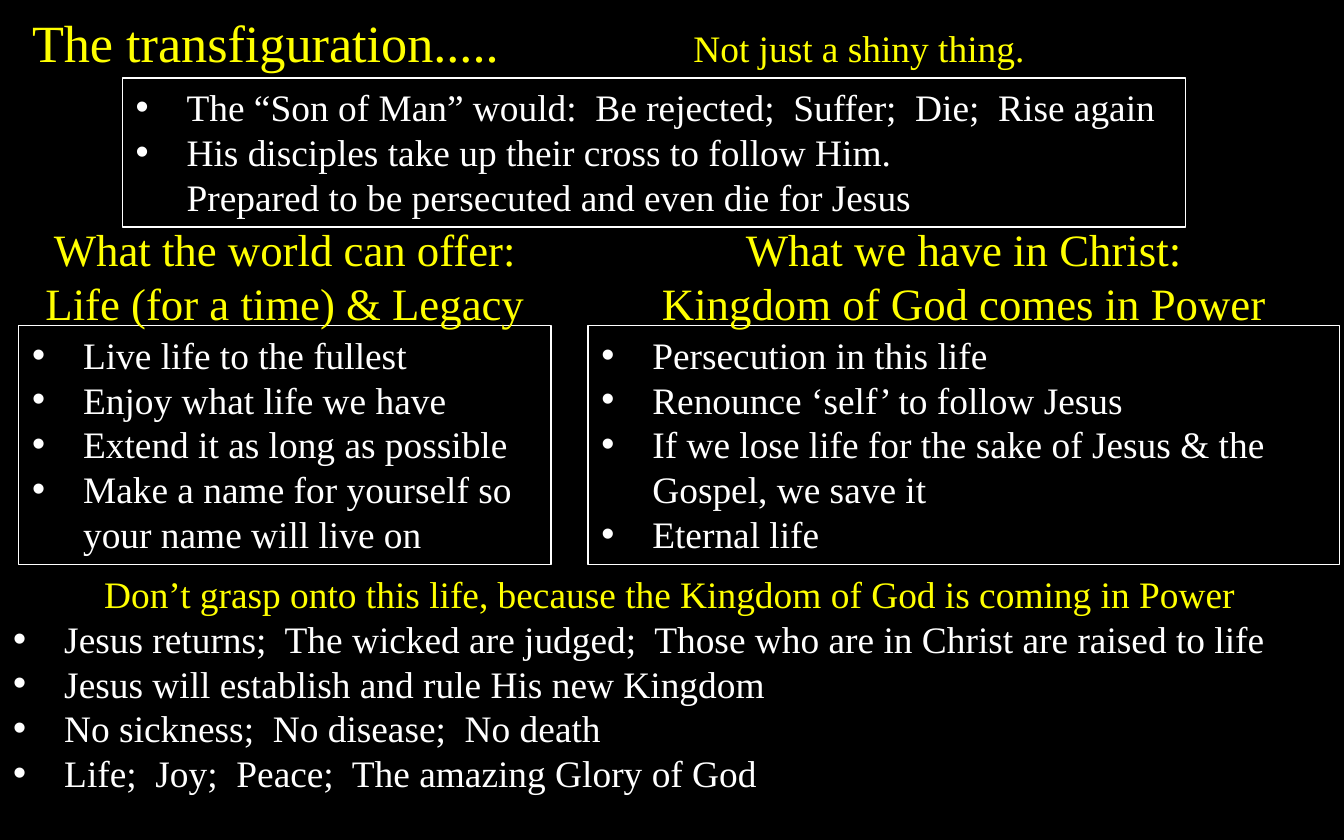
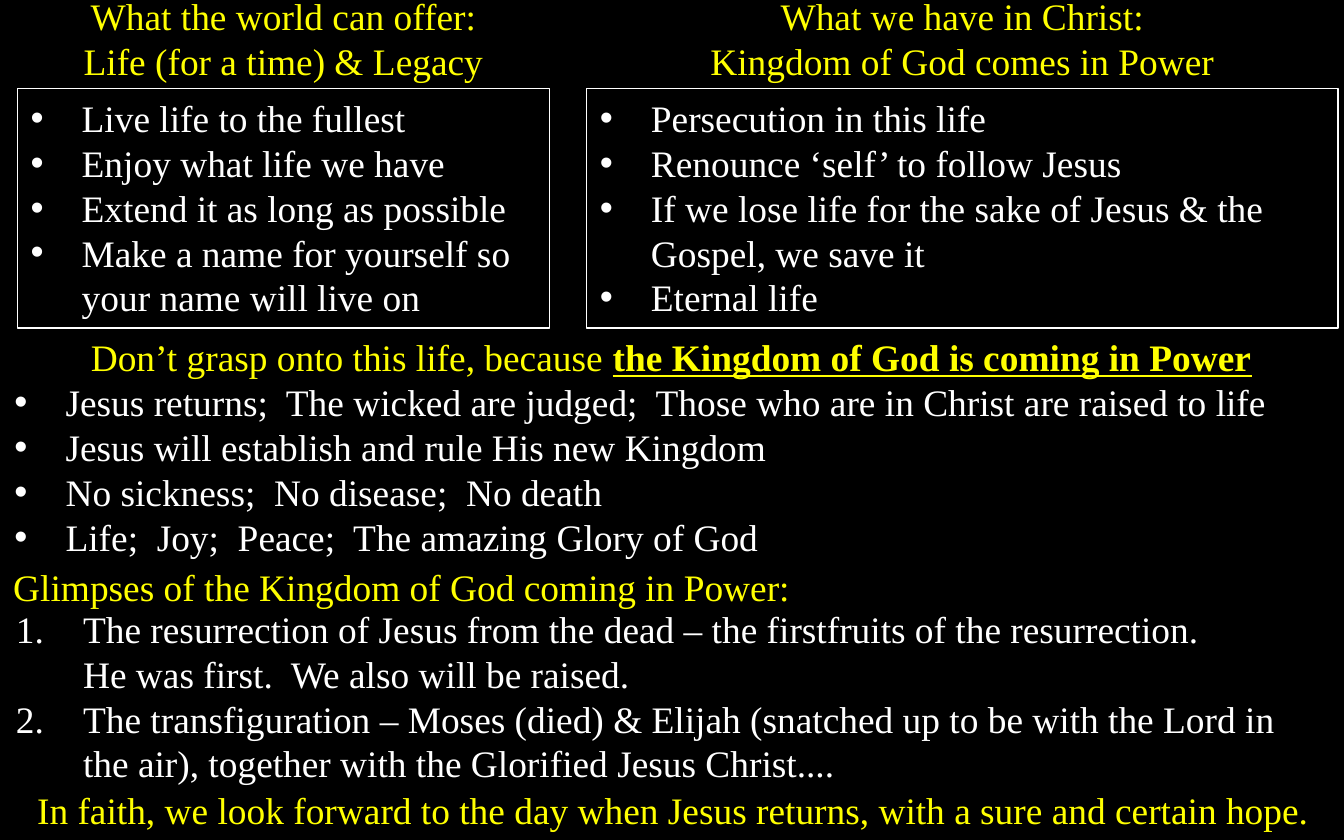
from dataclasses import dataclass

from lxml import etree
from pptx import Presentation
from pptx.dml.color import RGBColor
from pptx.enum.shapes import MSO_SHAPE
from pptx.enum.text import MSO_ANCHOR, MSO_AUTO_SIZE, PP_ALIGN
from pptx.oxml.ns import qn
from pptx.slide import Slide
from pptx.text.text import TextFrame, _Paragraph
from pptx.util import Inches, Pt

BLACK = RGBColor(0, 0, 0)
WHITE = RGBColor(255, 255, 255)
YELLOW = RGBColor(255, 255, 0)
FONT = "Times New Roman"
BODY_SIZE = 20
HEADING_SIZE = 24
TITLE_SIZE = 28
LEFT = PP_ALIGN.LEFT
CENTER = PP_ALIGN.CENTER
TOP = MSO_ANCHOR.TOP
RECTANGLE = MSO_SHAPE.RECTANGLE
GROW = MSO_AUTO_SIZE.SHAPE_TO_FIT_TEXT
EMPHASIS = {"bold": True, "underline": True}
BULLET = "bullet"
NUMBER = "number"
INDENTS = {BULLET: Inches(0.38), NUMBER: Inches(0.5)}


@dataclass(frozen=True)
class Span:
    text: str
    size: int = BODY_SIZE
    color: RGBColor = YELLOW
    emphasis: bool = False


@dataclass(frozen=True)
class Line:
    spans: tuple[Span, ...]
    align: PP_ALIGN = LEFT
    marker: str = ""
    tab: float = 0


@dataclass(frozen=True)
class Box:
    left: float
    top: float
    width: float
    height: float
    lines: list[Line]
    outlined: bool = False


@dataclass(frozen=True)
class Column:
    offset: float
    width: float
    heading: tuple[str, ...]
    items: tuple[str, ...]


COLUMNS = (
    Column(
        0,
        3.96,
        ("What the world can offer:", "Life (for a time) & Legacy"),
        (
            "Live life to the fullest",
            "Enjoy what life we have",
            "Extend it as long as possible",
            "Make a name for yourself so your name will live on",
        ),
    ),
    Column(
        4.235,
        5.59,
        ("What we have in Christ:", "Kingdom of God comes in Power"),
        (
            "Persecution in this life",
            "Renounce ‘self’ to follow Jesus",
            "If we lose life for the sake of Jesus & the Gospel, we save it",
            "Eternal life",
        ),
    ),
)
TEACHINGS = (
    "The “Son of Man” would:  Be rejected;  Suffer;  Die;  Rise again",
    "His disciples take up their cross to follow Him.\n"
    "Prepared to be persecuted and even die for Jesus",
)
WARNING = "Don’t grasp onto this life, because "
PROMISE = "the Kingdom of God is coming in Power"
KINGDOM = (
    "Jesus returns;  The wicked are judged;  Those who are in Christ are raised to life",
    "Jesus will establish and rule His new Kingdom",
    "No sickness;  No disease;  No death",
    "Life;  Joy;  Peace;  The amazing Glory of God",
)
GLIMPSES = (
    "The resurrection of Jesus from the dead – the firstfruits of the resurrection.\n"
    "He was first.  We also will be raised.",
    "The transfiguration – Moses (died) & Elijah (snatched up to be with the Lord in "
    "the air), together with the Glorified Jesus Christ....",
)


def marked(texts: tuple[str, ...], marker: str = BULLET) -> list[Line]:
    return [Line((Span(text, color=WHITE),), marker=marker) for text in texts]


def centered(texts: tuple[str, ...], size: int = BODY_SIZE) -> list[Line]:
    return [Line((Span(text, size),), CENTER) for text in texts]


def add_marker(paragraph: _Paragraph, marker: str) -> None:
    properties = paragraph._p.get_or_add_pPr()
    indent = INDENTS[marker]
    properties.set("marL", str(indent))
    properties.set("indent", str(-indent))
    if marker == BULLET:
        etree.SubElement(properties, qn("a:buFont")).set("typeface", "Arial")
        etree.SubElement(properties, qn("a:buChar")).set("char", "•")
    else:
        etree.SubElement(properties, qn("a:buFont")).set("typeface", "+mj-lt")
        etree.SubElement(properties, qn("a:buAutoNum")).set("type", "arabicPeriod")


def add_tab(paragraph: _Paragraph, position: float) -> None:
    tabs = etree.SubElement(paragraph._p.get_or_add_pPr(), qn("a:tabLst"))
    tab = etree.SubElement(tabs, qn("a:tab"))
    tab.set("pos", str(Inches(position)))
    tab.set("algn", "l")


def add_span(paragraph: _Paragraph, span: Span) -> None:
    values = {"name": FONT, "size": Pt(span.size)}
    if span.emphasis:
        values |= EMPHASIS
    for index, text in enumerate(span.text.split("\n")):
        if index:
            paragraph.add_line_break()
        run = paragraph.add_run()
        run.text = text
        for name, value in values.items():
            setattr(run.font, name, value)
        run.font.color.rgb = span.color


def write_lines(frame: TextFrame, lines: list[Line]) -> None:
    for index, line in enumerate(lines):
        paragraph = frame.add_paragraph() if index else frame.paragraphs[0]
        paragraph.alignment = line.align
        if line.marker:
            add_marker(paragraph, line.marker)
        if line.tab:
            add_tab(paragraph, line.tab)
        for span in line.spans:
            add_span(paragraph, span)


def draw_box(slide: Slide, box: Box) -> None:
    bounds = [Inches(length) for length in (box.left, box.top, box.width, box.height)]
    if box.outlined:
        shape = slide.shapes.add_shape(RECTANGLE, *bounds)
        shape.shadow.inherit = False
        shape.fill.background()
        shape.line.color.rgb = WHITE
        shape.line.width = Pt(0.75)
    else:
        shape = slide.shapes.add_textbox(*bounds)
    frame = shape.text_frame
    settings = {"word_wrap": True, "auto_size": GROW, "vertical_anchor": TOP}
    for name, value in settings.items():
        setattr(frame, name, value)
    write_lines(frame, box.lines)


def draw_comparison(
    slide: Slide, left: float, top: float, heading: tuple[float, float], size: int
) -> None:
    heading_top, heading_height = heading
    for column in COLUMNS:
        x = left + column.offset
        draw_box(slide, Box(x, top, column.width, 1.78, marked(column.items), True))
        lines = centered(column.heading, size)
        draw_box(slide, Box(x, heading_top, column.width, heading_height, lines))


def draw_kingdom(slide: Slide, left: float, top: float, emphasis: bool) -> None:
    appeal = Line((Span(WARNING), Span(PROMISE, emphasis=emphasis)), CENTER)
    draw_box(slide, Box(left, top, 9.97, 1.78, [appeal, *marked(KINGDOM)]))


def add_black_slide(presentation: Presentation) -> Slide:
    slide = presentation.slides.add_slide(presentation.slide_layouts[6])
    slide.background.fill.solid()
    slide.background.fill.fore_color.rgb = BLACK
    return slide


def build_transfiguration(presentation: Presentation) -> None:
    slide = add_black_slide(presentation)
    title = Line(
        (Span("The transfiguration.....\t", TITLE_SIZE), Span("Not just a shiny thing.")),
        tab=4.92,
    )
    draw_box(slide, Box(0.14, 0.03, 9.69, 0.57, [title]))
    draw_box(slide, Box(0.91, 0.58, 7.91, 1.11, marked(TEACHINGS), True))
    draw_comparison(slide, 0.14, 2.42, (1.6, 0.91), HEADING_SIZE)
    draw_kingdom(slide, 0, 4.2, False)


def build_glimpses(presentation: Presentation) -> None:
    slide = add_black_slide(presentation)
    draw_comparison(slide, 0.13, 0.66, (-0.1, 0.77), BODY_SIZE)
    draw_kingdom(slide, 0.01, 2.44, True)
    glimpses_title = Line((Span("Glimpses of the Kingdom of God coming in Power:"),))
    draw_box(slide, Box(0, 4.15, 9.98, 0.44, [glimpses_title]))
    draw_box(slide, Box(0.02, 4.46, 9.97, 1.45, marked(GLIMPSES, NUMBER)))
    hope = "In faith, we look forward to the day when Jesus returns, with a sure and certain hope."
    draw_box(slide, Box(0.02, 5.81, 9.98, 0.44, centered((hope,))))


def main() -> None:
    presentation = Presentation()
    presentation.slide_width = Inches(10)
    presentation.slide_height = Inches(6.25)
    build_transfiguration(presentation)
    build_glimpses(presentation)
    presentation.save("out.pptx")


if __name__ == "__main__":
    main()
